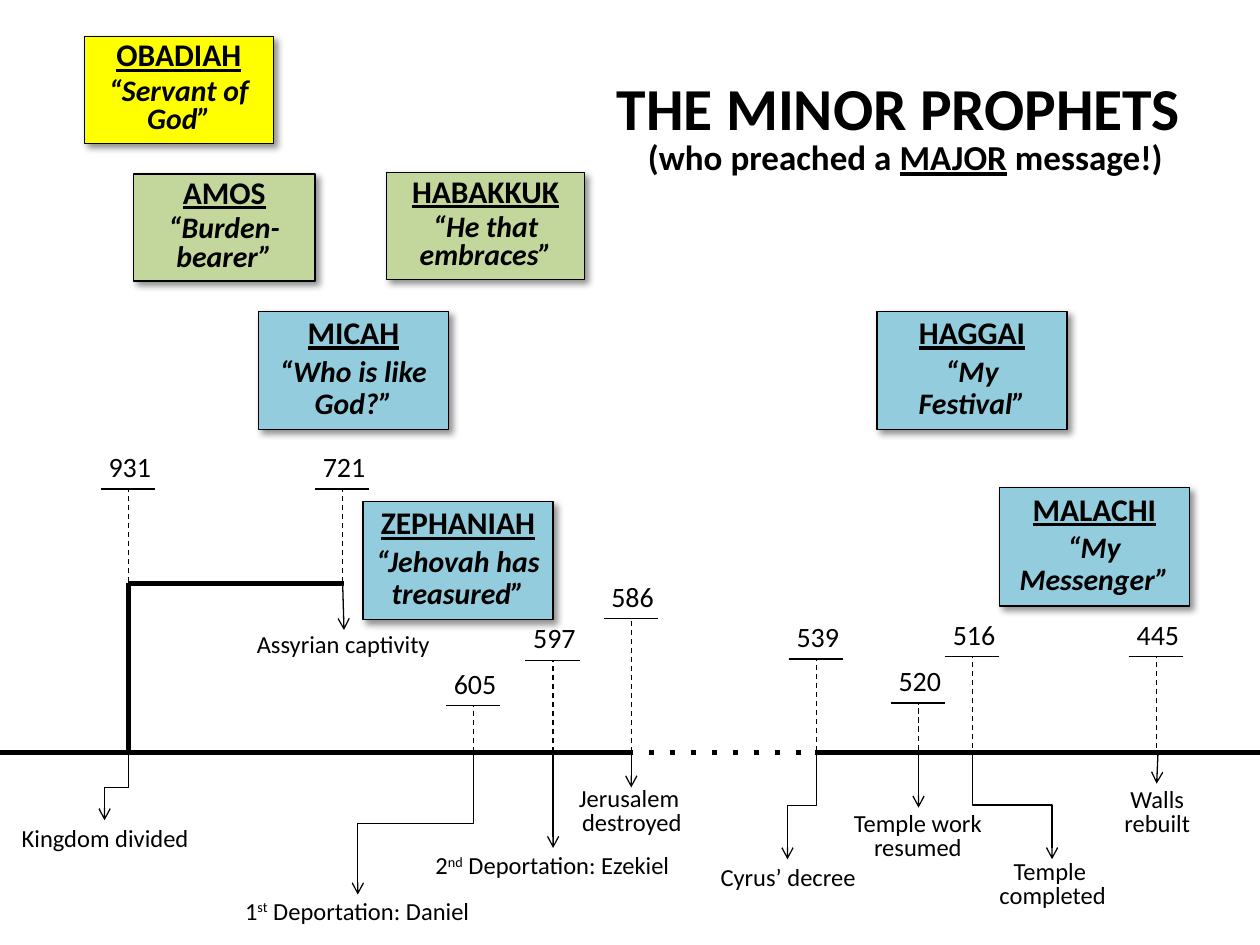
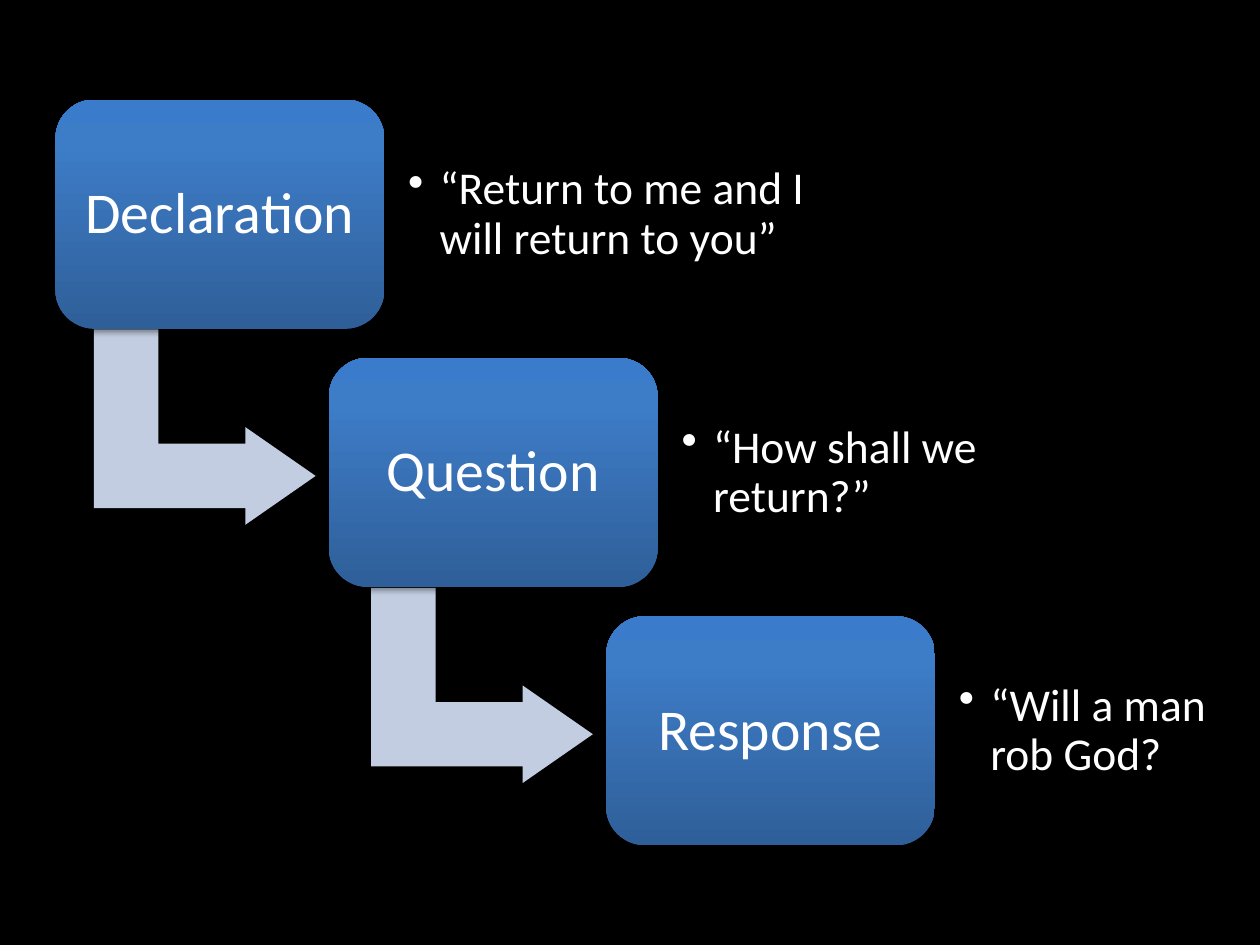
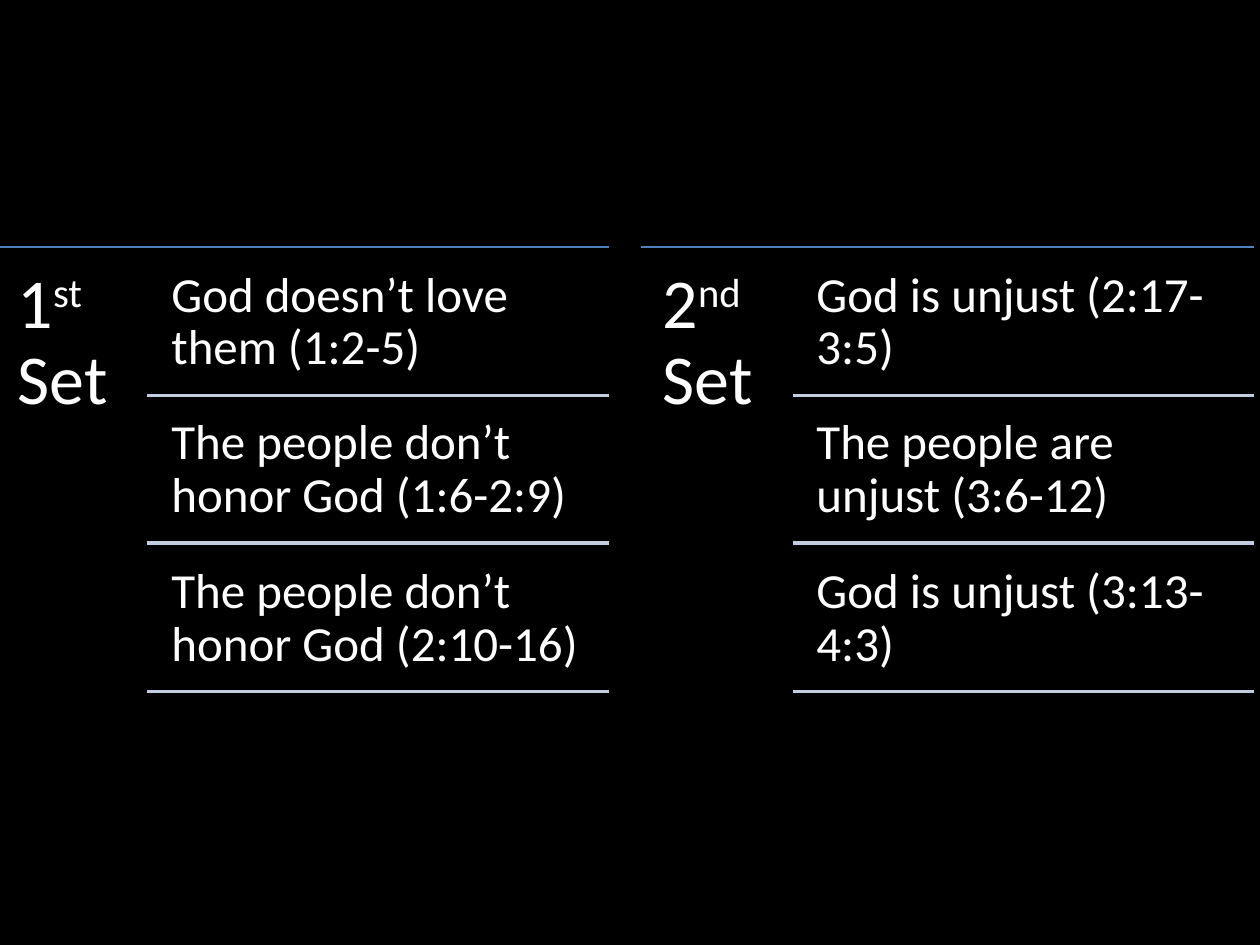
import copy
import lxml.etree
import pptx
import pptx.util
import pptx.dml.color
import pptx.enum.shapes
import pptx.enum.text
import pptx.oxml.ns

U = 9144
HUE = {
    "black": "000000", "white": "FFFFFF", "yellow": "FFFF00",
    "green": "C3D69B", "aqua": "93CDDD", "pale": "C2CDE1", "blue": "4F81BD",
    "deep": "2F5F99", "mid": "3D7CC7", "light": "3A7CCB",
}
FONT = "Calibri"
RGB = pptx.dml.color.RGBColor.from_string
KIND = pptx.enum.shapes.MSO_SHAPE
WIRE = pptx.enum.shapes.MSO_CONNECTOR
ALIGN = pptx.enum.text.PP_ALIGN
ANCHOR = pptx.enum.text.MSO_ANCHOR
qn = pptx.oxml.ns.qn
add = lxml.etree.SubElement


def write(box, paras, hue="black", align=ALIGN.CENTER, lead=1, after=0,
          pad=None, mid=False, dot=False):
    frame = box.text_frame
    frame.word_wrap = True
    frame.vertical_anchor = ANCHOR.MIDDLE if mid else ANCHOR.TOP
    if pad is not None:
        frame.margin_left = frame.margin_right = pad * U
        frame.margin_top = frame.margin_bottom = pad * U
    for n, (text, size, marks, alt) in enumerate(paras):
        para = frame.add_paragraph() if n else frame.paragraphs[0]
        para.alignment = align
        para.line_spacing = lead
        para.space_before = pptx.util.Pt(0)
        para.space_after = pptx.util.Pt(after if n < len(paras) - 1 else 0)
        if dot:
            para.level = 1
            props = para._p.get_or_add_pPr()
            props.set("marL", str(25 * U))
            props.set("indent", str(-25 * U))
            add(props, qn("a:buChar"), char="•")
        for k, part in enumerate(text.split("|")):
            style = marks + alt if k % 2 else marks
            run = para.add_run()
            run.text = part
            run.font.name = FONT
            run.font.size = pptx.util.Pt(size)
            run.font.color.rgb = RGB(HUE[hue])
            run.font.bold = "b" in style
            run.font.italic = "i" in style
            run.font.underline = "u" in style
            if "s" in style:
                run._r.get_or_add_rPr().set("baseline", "30000")


def link(slide, x1, y1, x2, y2, hue="black", width=0.75, dash=None, tip=False):
    bent = tip and abs(x2 - x1) > 1
    turn = 5400000 if x2 < x1 else 16200000
    if bent:
        side = 1 if x2 < x1 else -1
        cx, cy = (x1 + x2) / 2, (y1 + y2) / 2
        dx, dy = side * (y2 - y1) / 2, abs(x2 - x1) / 2
        x1, y1, x2, y2 = cx - dx, cy - dy, cx + dx, cy + dy
    ends = [int(v * U) for v in (x1, y1, x2, y2)]
    wire = slide.shapes.add_connector(WIRE.ELBOW if bent else WIRE.STRAIGHT, *ends)
    wire.line.color.rgb = RGB(HUE[hue])
    wire.line.width = pptx.util.Pt(width)
    props = wire.element.spPr
    if bent:
        props.find(qn("a:xfrm")).set("rot", str(turn))
    pen = props.find(qn("a:ln"))
    if dash:
        add(pen, qn("a:prstDash"), val=dash)
    if tip:
        add(pen, qn("a:tailEnd"), type="arrow")
    add(props, qn("a:effectLst"))


deck = pptx.Presentation()
deck.slide_width = 1000 * U
deck.slide_height = 750 * U
slides = []
for n in range(3):
    slide = deck.slides.add_slide(deck.slide_layouts[6])
    slide.background.fill.solid()
    slide.background.fill.fore_color.rgb = RGB(HUE["black"])
    slides.append(slide)
times, steps, sets = slides

shade = lxml.etree.Element(qn("a:outerShdw"), blurRad="50800", dist="38100",
                           dir="2700000", rotWithShape="0")
tint = add(shade, qn("a:srgbClr"), val=HUE["black"])
add(tint, qn("a:alpha"), val="43000")

sheet = times.shapes.add_shape(KIND.RECTANGLE, -U, 0, 1001 * U, 750 * U)
sheet.shadow.inherit = False
sheet.fill.solid()
sheet.fill.fore_color.rgb = RGB(HUE["white"])
sheet.line.fill.background()

for x1, y1, x2, y2, dash in [
    (102, 597, 102, 463, None), (102, 463, 273, 463, None),
    (647, 597, 1000, 597, None), (498, 597, 647, 597, "dot"),
    (0, 597, 498, 597, None),
]:
    link(times, x1, y1, x2, y2, width=3, dash=dash)

for year, x, top, base in [
    ("931", 102, 388, 462), ("721", 272, 388, 462), ("605", 376, 560, 597),
    ("597", 439, 524, 597), ("586", 501, 491, 597), ("539", 648, 523, 596),
    ("520", 729, 558, 595), ("516", 772, 521, 594), ("445", 918, 521, 594),
]:
    link(times, x, base, x, top, dash="dash")
    link(times, x - 22, top, x + 21, top)
    box = times.shapes.add_textbox((x - 43) * U, (top - 36) * U, 88 * U, 37 * U)
    write(box, [(year, 16, "", "")])

for x1, y1, x2, y2, left, top, width, lines in [
    (102, 599, 83, 651, -23, 648, 213, ["Kingdom divided"]),
    (376, 597, 284, 710, 169, 706, 229, ["1|st| Deportation: Daniel"]),
    (648, 597, 625, 682, 511, 679, 229, ["Cyrus’ decree"]),
    (272, 464, 273, 500, 166, 494, 213, ["Assyrian captivity"]),
    (439, 597, 439, 673, 332, 670, 213, ["2|nd| Deportation: Ezekiel"]),
    (501, 599, 501, 625, 395, 621, 213, ["Jerusalem ", "destroyed"]),
    (729, 596, 729, 641, 622, 641, 213, ["Temple work", "resumed"]),
    (772, 596, 835, 682, 729, 679, 213, ["Temple ", "completed"]),
    (919, 599, 918, 622, 812, 622, 213, ["Walls", "rebuilt"]),
]:
    link(times, x1, y1, x2, y2, tip=True)
    pair = len(lines) > 1
    box = times.shapes.add_textbox(left * U, top * U, width * U,
                                   (49 if pair else 34) * U)
    write(box, [(line, 14, "", "s") for line in lines], lead=0.8 if pair else 1)

for name, sense, hue, x, y, w, h in [
    ("AMOS", "“Burden-bearer”", "green", 106, 138, 144, 85),
    ("MICAH", "“Who is like God?”", "aqua", 205, 247, 151, 94),
    ("OBADIAH", "“Servant of God”", "yellow", 67, 29, 150, 85),
    ("HABAKKUK", "“He that embraces”", "green", 307, 137, 157, 85),
    ("ZEPHANIAH", "“Jehovah has treasured”", "aqua", 288, 398, 151, 94),
    ("HAGGAI", "“My Festival”", "aqua", 696, 247, 151, 94),
    ("MALACHI", "“My Messenger”", "aqua", 793, 387, 151, 94),
]:
    card = times.shapes.add_shape(KIND.RECTANGLE, x * U, y * U, w * U, h * U)
    card.fill.solid()
    card.fill.fore_color.rgb = RGB(HUE[hue])
    card.line.color.rgb = RGB(HUE["black"])
    card.line.width = pptx.util.Pt(0.75)
    card.shadow.inherit = False
    card.element.spPr.find(qn("a:effectLst")).append(copy.deepcopy(shade))
    write(card, [(name, 18, "bu", ""), (sense, 17, "bi", "")],
          lead=0.8 if h == 85 else 0.9, after=3)

for text, size, top, high in [
    ("THE MINOR PROPHETS ", 34, 62, 58),
    ("(who preached a |MAJOR| message!)", 20, 109, 38),
]:
    box = times.shapes.add_textbox(469 * U, top * U, 499 * U, high * U)
    write(box, [(text, size, "b", "u")], lead=0.8)

shade.set("blurRad", "39370")
shade.set("dist", "22860")
shade.set("dir", "5400000")
tint[0].set("val", "35000")
for n, (name, quote, x, wide) in enumerate([
    ("Declaration", "“Return to me and I will return to you”", 44, 356),
    ("Question", "“How shall we return?”", 261, 301),
    ("Response", "“Will a man rob God?", 481, 231),
]):
    y = 79 + 205 * n
    if n < 2:
        arrow = steps.shapes.add_shape(KIND.BENT_UP_ARROW, (85 + 220 * n) * U,
                                       (y + 172) * U, 155 * U, 176 * U)
        arrow.rotation = 90
        for k, part in enumerate((0.33, 0.25, 0.36)):
            arrow.adjustments[k] = part
        arrow.fill.solid()
        arrow.fill.fore_color.rgb = RGB(HUE["pale"])
        arrow.line.fill.background()
        arrow.shadow.inherit = False
    block = steps.shapes.add_shape(KIND.ROUNDED_RECTANGLE, x * U, y * U,
                                   261 * U, 182 * U)
    block.adjustments[0] = 0.17
    block.fill.gradient()
    block.fill.gradient_angle = 90
    stops = block.element.spPr.find(qn("a:gradFill")).find(qn("a:gsLst"))
    stops.clear()
    for place, hue in ((0, "deep"), (80, "mid"), (100, "light")):
        stop = add(stops, qn("a:gs"), pos=str(place * 1000))
        add(stop, qn("a:srgbClr"), val=HUE[hue])
    block.line.fill.background()
    block.shadow.inherit = False
    block.element.spPr.find(qn("a:effectLst")).append(copy.deepcopy(shade))
    box = steps.shapes.add_textbox((x + 9) * U, (y + 9) * U, 243 * U, 165 * U)
    write(box, [(name, 33, "", "")], "white", lead=0.9, pad=14, mid=True)
    box = steps.shapes.add_textbox((x + 269) * U, (y + 18) * U, wide * U, 147 * U)
    write(box, [(quote, 26, "", "")], "white", ALIGN.LEFT, 0.9, pad=11,
          mid=True, dot=True)

for left, label, items in [
    (-3, "1|st| Set", ["God doesn’t love them (1:2-5)",
                       "The people don’t honor God (1:6-2:9)",
                       "The people don’t honor God (2:10-16)"]),
    (509, "2|nd| Set", ["God is unjust (2:17-3:5)",
                        "The people are unjust (3:6-12)",
                        "God is unjust (3:13-4:3)"]),
]:
    link(sets, left, 196, left + 486, 196, "blue")
    box = sets.shapes.add_textbox(left * U, 196 * U, 120 * U, 358 * U)
    write(box, [(label, 40, "", "s")], "white", ALIGN.LEFT, 0.9, pad=17)
    for n, item in enumerate(items):
        y = 202 + 235 * n // 2
        box = sets.shapes.add_textbox((left + 127) * U, y * U, 359 * U, 112 * U)
        write(box, [(item, 28, "", "")], "white", ALIGN.LEFT, 0.9, pad=12)
        link(sets, left + 120, y + 112, left + 486, y + 112, "pale", 2)

deck.save("out.pptx")
